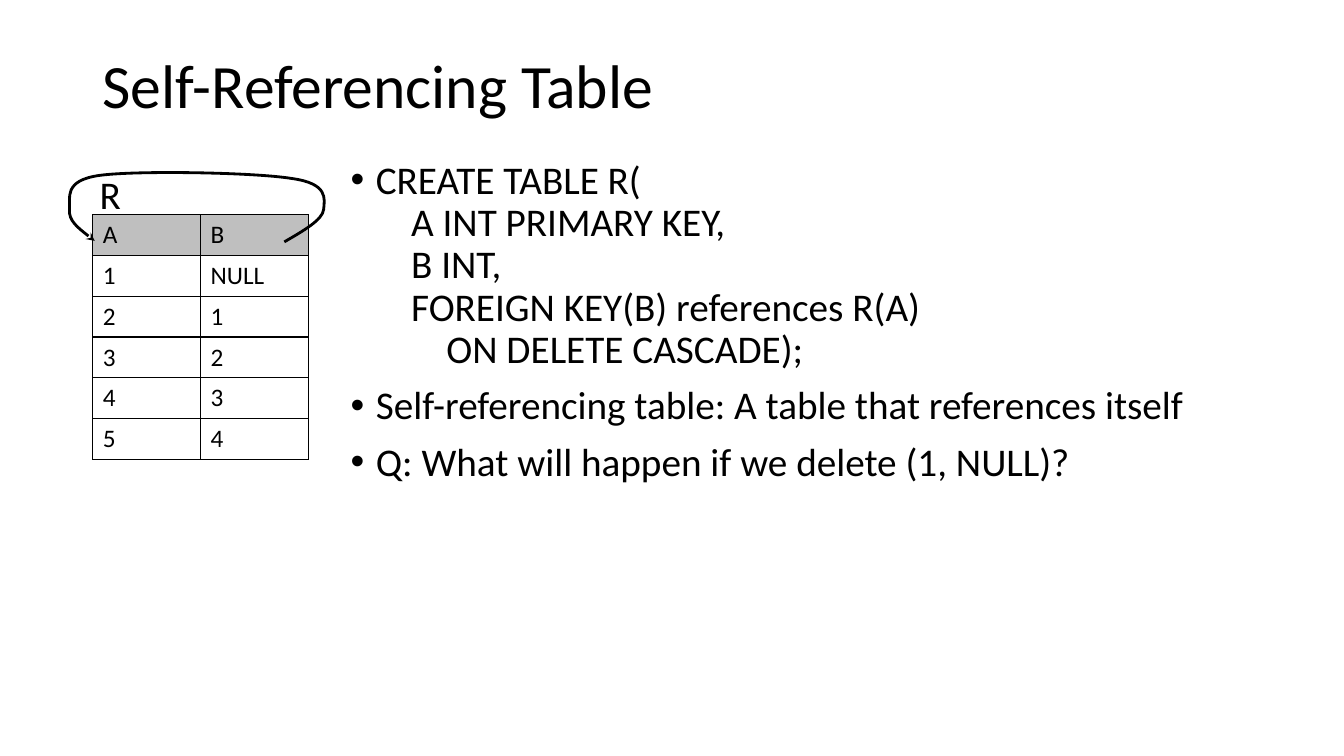
from lxml import etree
from pptx import Presentation
from pptx.dml.color import RGBColor
from pptx.enum.text import MSO_ANCHOR, MSO_AUTO_SIZE
from pptx.oxml.ns import qn
from pptx.util import Inches, Pt

MIDDLE = MSO_ANCHOR.MIDDLE
GROW = MSO_AUTO_SIZE.SHAPE_TO_FIT_TEXT
FONT = "Calibri"
COLORS = {"ink": "000000", "header": "BFBFBF"}

RELATION = [
    ("A", "B"),
    ("1", "NULL"),
    ("2", "1"),
    ("3", "2"),
    ("4", "3"),
    ("5", "4"),
]
STATEMENTS = [
    ("CREATE TABLE R(", 0.25, True),
    ("A INT PRIMARY KEY,", 0.6, False),
    ("B INT,", 0.6, False),
    ("FOREIGN KEY(B) references R(A)", 0.6, False),
    ("ON DELETE CASCADE);", 0.95, False),
    ("Self-referencing table: A table that references itself", 0.25, True),
    ("Q: What will happen if we delete (1, NULL)?", 0.25, True),
]
REFERENCE_START = (2.82, 2.4)
REFERENCE_CURVE = [
    (3.01, 2.29), (3.2, 2.18), (3.21, 2.08),
    (3.22, 1.97), (3.26, 1.82), (2.89, 1.77),
    (2.52, 1.71), (1.35, 1.69), (0.99, 1.74),
    (0.62, 1.79), (0.7, 1.97), (0.69, 2.08),
    (0.68, 2.19), (0.81, 2.29), (0.94, 2.39),
]


def rgb(name):
    return RGBColor.from_string(COLORS[name])


def write(paragraph, text, size):
    paragraph.text = text
    for run in paragraph.runs:
        run.font.name = FONT
        run.font.size = Pt(size)
        run.font.color.rgb = rgb("ink")


def add_frame(slide, left, top, width, height, wrap=True):
    box = slide.shapes.add_textbox(
        Inches(left), Inches(top), Inches(width), Inches(height))
    box.text_frame.word_wrap = wrap
    return box.text_frame


def add_title(slide):
    heading = add_frame(slide, 0.92, 0.33, 11.5, 1.09)
    heading.vertical_anchor = MIDDLE
    write(heading.paragraphs[0], "Self-Referencing Table", 44)
    heading.paragraphs[0].line_spacing = 0.9


def add_relation_name(slide):
    label = add_frame(slide, 0.89, 1.64, 0.42, 0.57, wrap=False)
    label.auto_size = GROW
    write(label.paragraphs[0], "R", 28)


def add_borders(cell):
    properties = cell._tc.get_or_add_tcPr()
    for side in ("a:lnL", "a:lnR", "a:lnT", "a:lnB"):
        border = etree.SubElement(properties, qn(side), w=str(Pt(1)))
        solid = etree.SubElement(border, qn("a:solidFill"))
        etree.SubElement(solid, qn("a:srgbClr"), val=COLORS["ink"])


def add_relation(slide):
    relation = slide.shapes.add_table(
        len(RELATION), len(RELATION[0]),
        Inches(0.92), Inches(2.13), Inches(2.14), Inches(2.43)).table
    relation.horz_banding = False
    relation.first_row = False
    for row, values in enumerate(RELATION):
        for column, value in enumerate(values):
            cell = relation.cell(row, column)
            write(cell.text_frame.paragraphs[0], value, 18)
            add_borders(cell)
            if row == 0:
                cell.fill.solid()
                cell.fill.fore_color.rgb = rgb("header")
            else:
                cell.fill.background()


def add_statements(slide):
    body = add_frame(slide, 3.38, 1.54, 9.04, 5.84)
    for index, (text, margin, bulleted) in enumerate(STATEMENTS):
        paragraph = body.add_paragraph() if index else body.paragraphs[0]
        write(paragraph, text, 28)
        paragraph.line_spacing = 0.9
        paragraph.space_before = Pt(10 if bulleted else 0)
        properties = paragraph._p.get_or_add_pPr()
        properties.set("marL", str(Inches(margin)))
        properties.set("indent", str(Inches(-0.25 if bulleted else 0)))
        if bulleted:
            etree.SubElement(properties, qn("a:buFont"), typeface="Arial")
            etree.SubElement(properties, qn("a:buChar"), char="•")
        else:
            etree.SubElement(properties, qn("a:buNone"))


def bend_segments(outline):
    segments = list(outline.iter(qn("a:lnTo")))
    for first in range(0, len(segments), 3):
        curve = etree.Element(qn("a:cubicBezTo"))
        segments[first].addprevious(curve)
        for segment in segments[first:first + 3]:
            curve.append(segment[0])
            segment.getparent().remove(segment)


def add_reference_arrow(slide):
    start_x, start_y = REFERENCE_START
    builder = slide.shapes.build_freeform(Inches(start_x), Inches(start_y))
    builder.add_line_segments(
        [(Inches(x), Inches(y)) for x, y in REFERENCE_CURVE], close=False)
    arrow = builder.convert_to_shape()
    bend_segments(arrow._element)
    arrow.shadow.inherit = False
    arrow.fill.background()
    arrow.line.color.rgb = rgb("ink")
    arrow.line.width = Pt(2)
    etree.SubElement(arrow.line._get_or_add_ln(), qn("a:tailEnd"), type="stealth")


def main():
    deck = Presentation()
    deck.slide_width = Inches(13.33)
    deck.slide_height = Inches(7.5)
    slide = deck.slides.add_slide(deck.slide_layouts[6])
    add_title(slide)
    add_relation(slide)
    add_relation_name(slide)
    add_statements(slide)
    add_reference_arrow(slide)
    deck.save("out.pptx")


if __name__ == "__main__":
    main()
